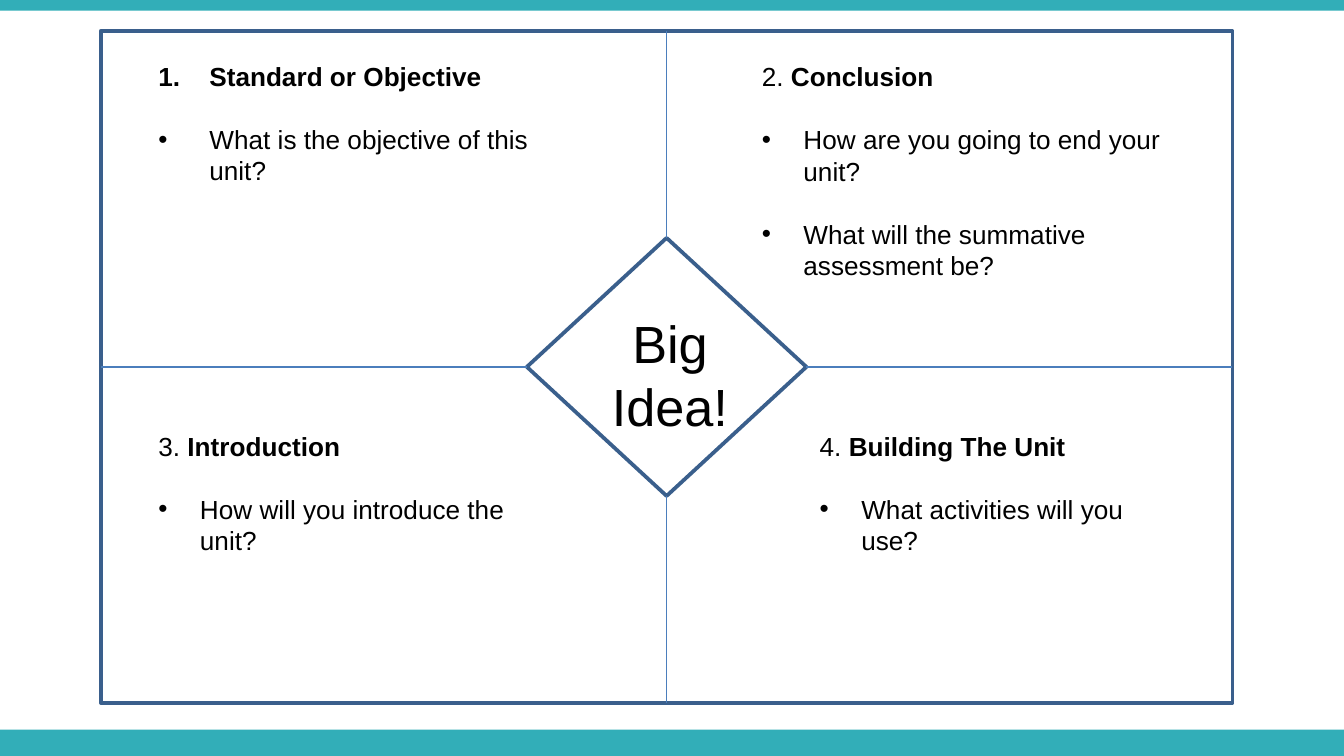
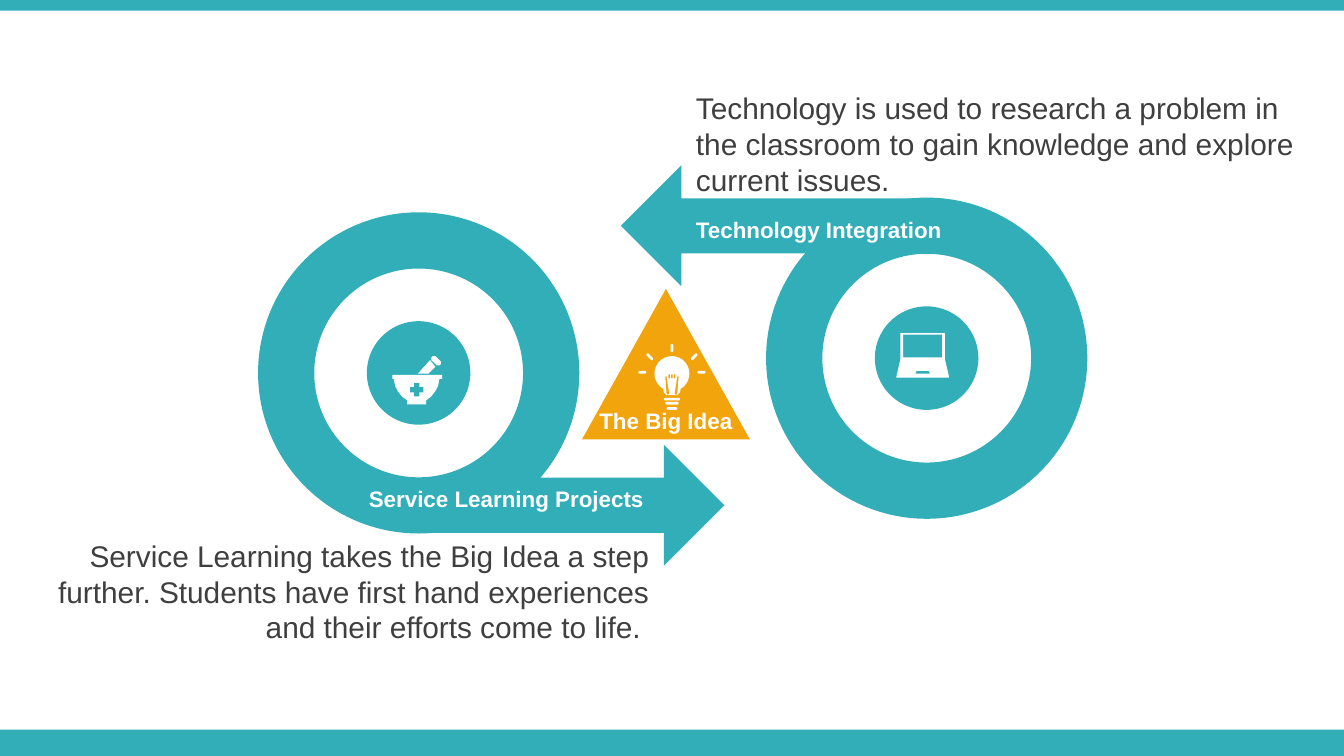
from math import atan2, cos, pi, radians, sin

from lxml.etree import SubElement
from pptx import Presentation
from pptx.dml.color import RGBColor
from pptx.enum.shapes import MSO_CONNECTOR, MSO_SHAPE
from pptx.enum.text import PP_ALIGN
from pptx.oxml.ns import qn
from pptx.util import Emu, Pt

EMU_PER_PX = 9144  # 100 px to the inch
WIDTH = 1000

TEAL = "32AEB8"
ORANGE = "F2A40D"
WHITE = "FFFFFF"
BLACK = "000000"
GREY = "3F3F3F"
FRAME_BLUE = "3A5F8C"
LINE_BLUE = "4B7EBC"
FONT = "Arial"


def px(length):
    return Emu(round(length * EMU_PER_PX))


def rgb(color):
    return RGBColor.from_string(color)


# Shapes and lines

def paint(shape, fill=None, line=None):
    shape.shadow.inherit = False
    if fill:
        shape.fill.solid()
        shape.fill.fore_color.rgb = rgb(fill)
    else:
        shape.fill.background()
    if line:
        shape.line.color.rgb = rgb(line)
        shape.line.width = Pt(2)
    else:
        shape.line.fill.background()


def add_preset(slide, kind, box, fill=None, line=None, adjust=(), rotation=0):
    shape = slide.shapes.add_shape(kind, *map(px, box))
    for index, value in enumerate(adjust):
        shape.adjustments[index] = value
    shape.rotation = rotation
    paint(shape, fill, line)
    return shape


def add_divider(slide, start, end, side):
    divider = slide.shapes.add_connector(MSO_CONNECTOR.STRAIGHT, 0, 0, 0, 0)
    divider.begin_connect(start, side)
    divider.end_connect(end, side)
    divider.line.color.rgb = rgb(LINE_BLUE)
    divider.line.width = Pt(0.75)
    SubElement(divider._element.spPr, qn("a:effectLst"))


def add_icon(slide, contours):
    first = contours[0][0]
    builder = slide.shapes.build_freeform(px(first[0]), px(first[1]))
    for contour in contours:
        points = [(px(x), px(y)) for x, y in contour]
        builder.move_to(*points[0])
        builder.add_line_segments(points[1:], close=True)
    paint(builder.convert_to_shape(), WHITE)


# Contours for icons

def rect(left, top, right, bottom):
    return [(left, top), (right, top), (right, bottom), (left, bottom)]


def arc(x, y, radius, start, end, steps):
    angles = [radians(start + (end - start) * i / steps) for i in range(steps + 1)]
    return [(x + radius * cos(a), y + radius * sin(a)) for a in angles]


def capsule(x1, y1, x2, y2, radius=1):
    heading = atan2(y2 - y1, x2 - x1) * 180 / pi
    return (arc(x2, y2, radius, heading - 90, heading + 90, 6)
            + arc(x1, y1, radius, heading + 90, heading + 270, 6))


def mirror(contour, axis):
    return [(2 * axis - x, y) for x, y in contour]


# Text

def add_text(slide, box):
    frame = slide.shapes.add_textbox(*map(px, box)).text_frame
    frame.word_wrap = True
    return frame


def style(paragraph, size, color, bold=None, align=None):
    paragraph.font.name = FONT
    paragraph.font.size = Pt(size)
    paragraph.font.color.rgb = rgb(color)
    paragraph.font.bold = bold
    paragraph.alignment = align


def add_label(slide, box, text, size, color, bold=None, align=None):
    paragraph = add_text(slide, box).paragraphs[0]
    paragraph.text = text
    style(paragraph, size, color, bold, align)


def set_bullet(paragraph, indent, tag, **attributes):
    props = paragraph._p.get_or_add_pPr()
    props.set("marL", str(px(indent)))
    props.set("indent", str(-px(indent)))
    SubElement(props, qn("a:buFont"), typeface=FONT)
    SubElement(props, qn(tag), **attributes)


def add_quadrant(slide, box, number, heading, questions, indent=31, auto_number=False):
    frame = add_text(slide, box)
    title = frame.paragraphs[0]
    if auto_number:
        set_bullet(title, indent, "a:buAutoNum", type="arabicPeriod")
    else:
        title.add_run().text = f"{number}. "
    run = title.add_run()
    run.text = heading
    run.font.bold = True
    style(title, 14, BLACK)
    for question in questions:
        paragraph = frame.add_paragraph()
        paragraph.text = question
        set_bullet(paragraph, indent, "a:buChar", char="•")
        style(paragraph, 14, BLACK)
        paragraph.space_before = Pt(17)


# Slides

def add_banded_slide(deck):
    slide = deck.slides.add_slide(deck.slide_layouts[6])
    for top, height in ((543, 20), (0, 8)):
        add_preset(slide, MSO_SHAPE.RECTANGLE, (0, top, WIDTH, height), TEAL)
    return slide


def build_planner(deck):
    slide = add_banded_slide(deck)
    frame = add_preset(slide, MSO_SHAPE.RECTANGLE, (75, 23, 842, 500), line=FRAME_BLUE)
    diamond = add_preset(slide, MSO_SHAPE.DIAMOND, (392, 177, 208, 192), line=FRAME_BLUE)
    for side in range(4):
        add_divider(slide, diamond, frame, side)
    add_label(slide, (440, 227, 117, 104), "Big Idea!", 28, BLACK, align=PP_ALIGN.CENTER)

    add_quadrant(slide, (108, 40, 300, 104), 1, "Standard or Objective",
                 ["What is the objective of this unit?"], indent=38, auto_number=True)
    add_quadrant(slide, (557, 40, 327, 175), 2, "Conclusion",
                 ["How are you going to end your unit?",
                  "What will the summative assessment be?"])
    add_quadrant(slide, (108, 315, 317, 104), 3, "Introduction",
                 ["How will you introduce the unit?"])
    add_quadrant(slide, (600, 315, 258, 104), 4, "Building The Unit",
                 ["What activities will you use?"])


def add_loop(slide, ring, arrow, hub, rotation):
    add_preset(slide, MSO_SHAPE.DONUT, (*ring, 239, 239), TEAL,
               adjust=(0.175,), rotation=rotation)
    add_preset(slide, MSO_SHAPE.RIGHT_ARROW, (*arrow, 217, 90), TEAL,
               adjust=(0.455, 0.5), rotation=rotation)
    add_preset(slide, MSO_SHAPE.OVAL, (*hub, 77, 77), TEAL)


def add_mortar(slide):
    wall = [(327, 282), (326, 287), (324, 291), (321, 295), (317, 298)]
    cross = [(308, 285), (312, 285), (312, 288), (315, 288), (315, 292), (312, 292),
             (312, 295), (308, 295), (308, 292), (305, 292), (305, 288), (308, 288)]
    pestle = [(320, 268), (324, 273), (319, 278), (311, 278)]
    grip = [(322, 265), (324, 265), (328, 269), (328, 271),
            (327, 272), (325, 272), (321, 268), (321, 266)]
    add_icon(slide, [rect(292, 279, 329, 282), wall + mirror(wall, 310)[::-1], cross,
                     rect(303, 298, 317, 301), pestle, grip])


def add_laptop(slide):
    body = [(670, 248), (703, 248), (703, 267), (706, 280),
            (706, 281), (667, 281), (667, 280), (670, 267)]
    touchpad = [(682, 276), (681, 278), (692, 278), (691, 276)]
    add_icon(slide, [body, rect(672, 249, 701, 266), touchpad])


def add_bulb(slide):
    axis = 500
    glass = arc(axis, 278, 13, 120, 420, 24) + [
        (506, 292), (504, 294), (496, 294), (494, 292)]
    wire = [(495, 280), (496, 280), (498, 293), (497, 294), (496, 293)]
    coils = [capsule(x, 279, x, 281, 0.6) for x in (498, 500, 502)]
    rays = [capsule(476, 277, 480, 277), capsule(482, 264, 485, 267)]
    threads = [capsule(axis - half, y, axis + half, y)
               for half, y in ((5, 297), (4, 300), (3, 304))]
    add_icon(slide, [glass, wire, mirror(wire, axis), *coils, *rays,
                     *[mirror(ray, axis) for ray in rays],
                     capsule(axis, 257, axis, 261), *threads])


def build_loops(deck):
    slide = add_banded_slide(deck)
    add_loop(slide, (192, 158), (322, 331), (273, 239), 0)
    add_loop(slide, (570, 147), (462, 123), (651, 228), 180)
    add_preset(slide, MSO_SHAPE.ISOSCELES_TRIANGLE, (433, 215, 125, 112), ORANGE)

    add_label(slide, (508, 62, 475, 50),
              "Technology is used to research a problem in the classroom "
              "to gain knowledge and explore current issues.", 16, GREY)
    add_label(slide, (27, 395, 466, 108),
              "Service Learning takes the Big Idea a step further. Students have "
              "first hand experiences and their efforts come to life. ",
              16, GREY, align=PP_ALIGN.RIGHT)
    add_label(slide, (233, 356, 256, 30), "Service Learning Projects",
              12, WHITE, True, PP_ALIGN.RIGHT)
    add_label(slide, (508, 156, 256, 30), "Technology Integration", 12, WHITE, True)

    add_mortar(slide)
    add_laptop(slide)
    add_bulb(slide)
    add_label(slide, (433, 298, 125, 30), "The Big Idea", 12, WHITE, True, PP_ALIGN.CENTER)


def main():
    deck = Presentation()
    deck.slide_width = px(WIDTH)
    deck.slide_height = px(WIDTH * 9 / 16)
    build_planner(deck)
    build_loops(deck)
    deck.save("out.pptx")


if __name__ == "__main__":
    main()
